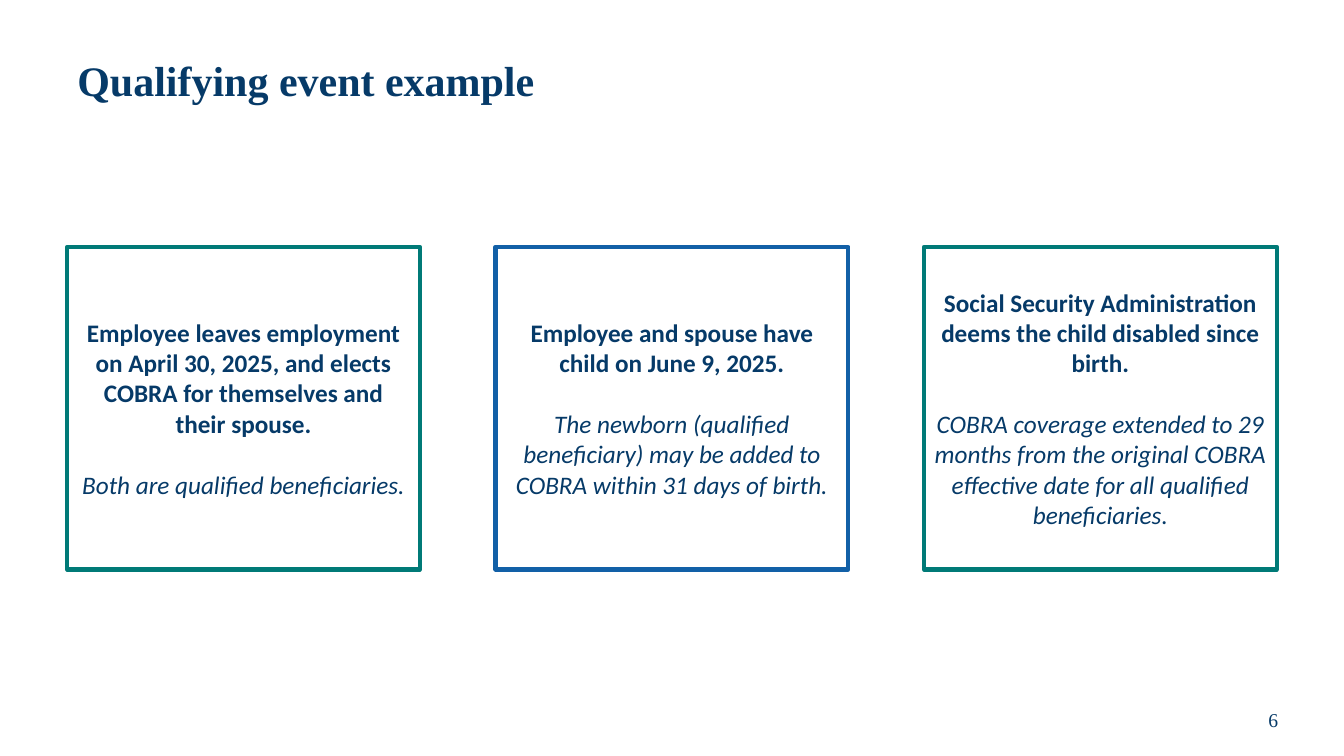
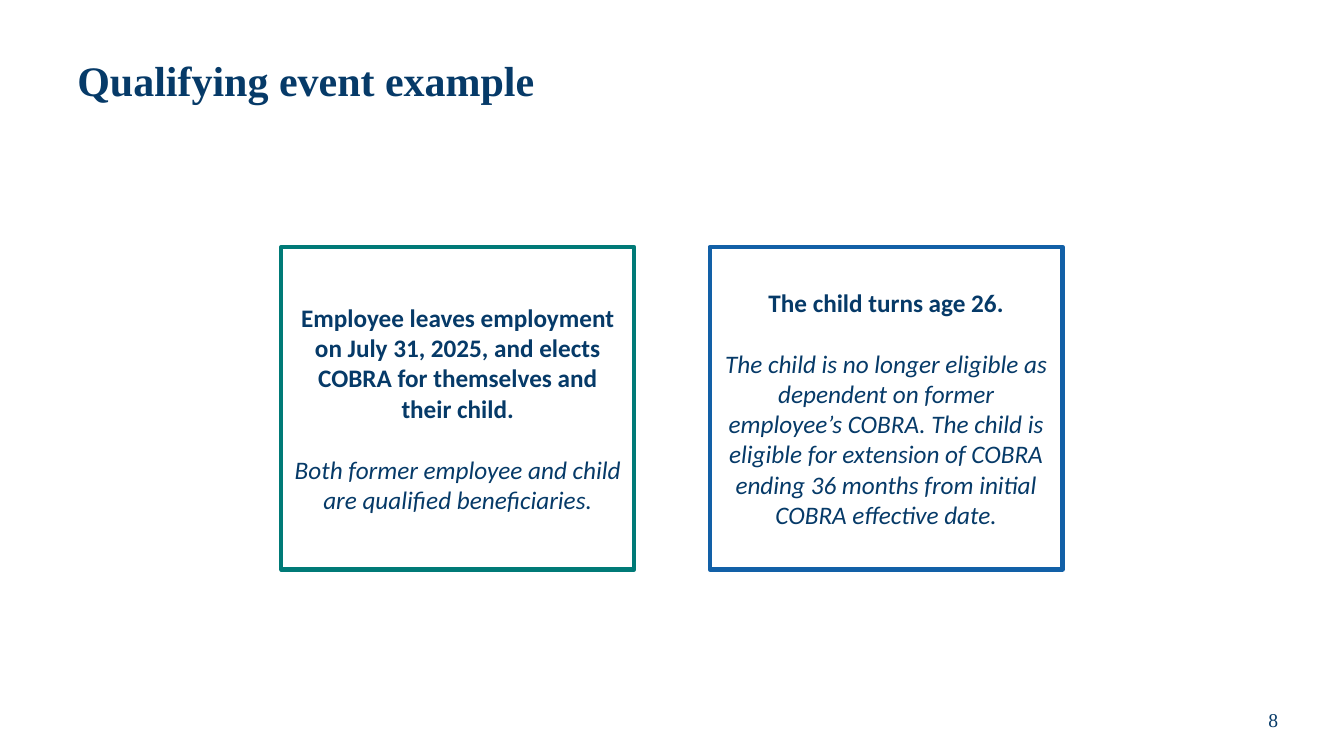
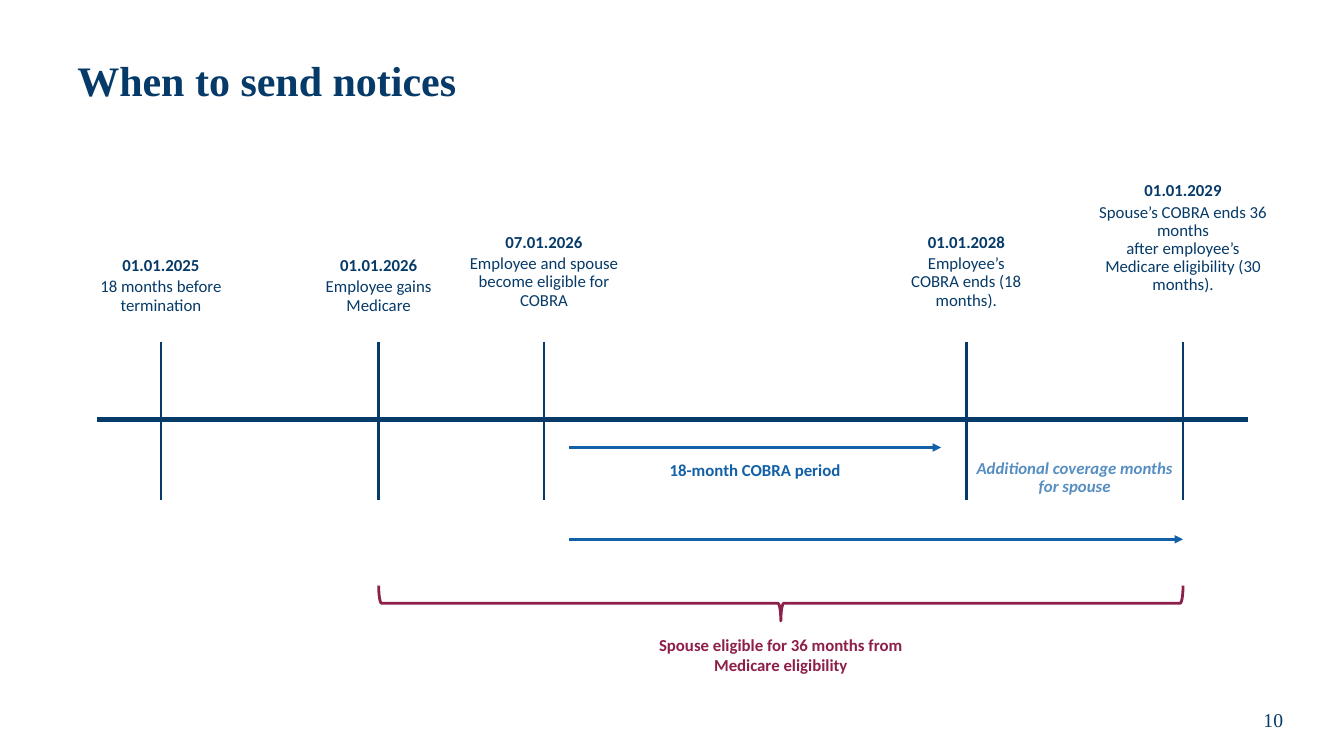
import dataclasses

import pptx
import pptx.dml.color
import pptx.enum.shapes
import pptx.enum.text
import pptx.oxml.ns
import pptx.util
from lxml import etree

SHAPES = pptx.enum.shapes.MSO_SHAPE
ALIGN = pptx.enum.text.PP_ALIGN
ANCHOR = pptx.enum.text.MSO_ANCHOR


@dataclasses.dataclass(frozen=True)
class Style:
    color: str
    size: float
    font: str = "Calibri"
    bold: bool = False
    italic: bool = False
    align: ALIGN = ALIGN.CENTER
    spacing: float = 1.0
    before: float = 0


@dataclasses.dataclass(frozen=True)
class Theme:
    navy: str = "063A68"
    blue: str = "1260A7"
    teal: str = "007A77"
    sky: str = "568EC1"
    wine: str = "8D1F4A"
    serif: str = "Times New Roman"
    title_size: int = 30
    number_size: int = 14
    card_size: int = 18
    label_size: int = 12


THEME = Theme()
TITLE = Style(THEME.navy, THEME.title_size, THEME.serif, bold=True, align=ALIGN.LEFT, spacing=0.9)
NUMBER = Style(THEME.navy, THEME.number_size, THEME.serif)
EVENT = Style(THEME.navy, THEME.card_size, bold=True)
OUTCOME = Style(THEME.navy, THEME.card_size, italic=True, before=22)
DATE = Style(THEME.navy, THEME.label_size, bold=True, spacing=0.9)
MILESTONE = Style(THEME.navy, THEME.label_size, spacing=0.9, before=2.4)
PERIOD = Style(THEME.blue, THEME.label_size, bold=True)
EXTRA = Style(THEME.sky, THEME.label_size, bold=True, italic=True, spacing=0.9)
ELIGIBILITY = Style(THEME.wine, THEME.label_size, bold=True)

presentation = pptx.Presentation()
presentation.slide_width = pptx.util.Inches(13.33)
presentation.slide_height = pptx.util.Inches(7.5)

# Twelve columns between the side margins, fifteen rows over the full height.
COLUMNS = 12
MARGIN = presentation.slide_width * 0.05
COLUMN = presentation.slide_width * 0.9 / COLUMNS
ROW = presentation.slide_height / 15


def area(column, row, columns, rows):
    """Return left, top, width and height of a block of the grid."""
    return (round(MARGIN + column * COLUMN), round(row * ROW),
            round(columns * COLUMN), round(rows * ROW))


def write(shape, *entries, anchor=ANCHOR.TOP):
    """Fill the shape with one paragraph for each (text, style) pair."""
    frame = shape.text_frame
    frame.word_wrap = True
    frame.vertical_anchor = anchor
    for index, (text, style) in enumerate(entries):
        paragraph = frame.add_paragraph() if index else frame.paragraphs[0]
        paragraph.text = text
        paragraph.alignment = style.align
        paragraph.line_spacing = style.spacing
        paragraph.space_before = pptx.util.Pt(style.before)
        paragraph.font.name = style.font
        paragraph.font.size = pptx.util.Pt(style.size)
        paragraph.font.bold = style.bold
        paragraph.font.italic = style.italic
        paragraph.font.color.rgb = pptx.dml.color.RGBColor.from_string(style.color)


# Title, page number and cards (event, outcome) of each slide
pages = [
    ("Qualifying event example", "6", [
        ("Employee leaves employment on April 30, 2025, and elects COBRA for themselves and their spouse.",
         "Both are qualified beneficiaries."),
        ("Employee and spouse have child on June 9, 2025.",
         "The newborn (qualified beneficiary) may be added to COBRA within 31 days of birth."),
        ("Social Security Administration deems the child disabled since birth.",
         "COBRA coverage extended to 29 months from the original COBRA effective date "
         "for all qualified beneficiaries."),
    ]),
    ("Qualifying event example", "8", [
        ("Employee leaves employment on July 31, 2025, and elects COBRA for themselves and their child.",
         "Both former employee and child are qualified beneficiaries."),
        ("The child turns age 26.",
         "The child is no longer eligible as dependent on former employee’s COBRA. The child is eligible "
         "for extension of COBRA ending 36 months from initial COBRA effective date."),
    ]),
    ("When to send notices", "10", []),
]
CARD_WIDTH, CARD_GAP = 3.5, 0.75

for title, number, cards in pages:
    slide = presentation.slides.add_slide(presentation.slide_layouts[5])
    heading = slide.shapes.title
    heading.left, heading.top, heading.width, heading.height = area(0, 0.5, COLUMNS, 2.3)
    write(heading, (title, TITLE), anchor=ANCHOR.MIDDLE)
    page_number = slide.shapes.add_textbox(*area(11.38, 13.78, 1.17, 1))
    write(page_number, (number, NUMBER), anchor=ANCHOR.MIDDLE)

    first_column = (COLUMNS + CARD_GAP - len(cards) * (CARD_WIDTH + CARD_GAP)) / 2
    for index, (event, outcome) in enumerate(cards):
        column = first_column + index * (CARD_WIDTH + CARD_GAP)
        card = slide.shapes.add_shape(SHAPES.RECTANGLE, *area(column, 4.9, CARD_WIDTH, 6.4))
        card.shadow.inherit = False
        card.fill.background()
        color = THEME.blue if index % 2 else THEME.teal
        card.line.color.rgb = pptx.dml.color.RGBColor.from_string(color)
        card.line.width = pptx.util.Pt(3)
        card.text_frame.margin_top = card.text_frame.margin_bottom = pptx.util.Inches(0.1)
        write(card, (event, EVENT), (outcome, OUTCOME), anchor=ANCHOR.MIDDLE)

# Timeline on the last slide: column, label row, label width, date, text
milestones = [
    (0.93, 5, 1.87, "01.01.2025", "18 months before termination"),
    (3.09, 5, 1.57, "01.01.2026", "Employee gains Medicare"),
    (4.73, 4.54, 1.87, "07.01.2026", "Employee and spouse become eligible for COBRA"),
    (8.92, 4.54, 1.38, "01.01.2028", "Employee’s COBRA ends (18 months)."),
    (11.07, 3.52, 1.96, "01.01.2029",
     "Spouse’s COBRA ends 36 months\vafter employee’s Medicare eligibility (30 months)."),
]
TICK_TOP, TICK_ROWS = 6.78, 3.14
medicare, cobra_start, cobra_end, spouse_end = [milestone[0] for milestone in milestones[1:]]
arrow_start = cobra_start + 0.25
period_length = cobra_end - 0.25 - arrow_start

# Column, row, columns, rows, colour, weight, arrowhead
lines = [(0.3, 8.32, 11.41, 0, THEME.navy, 4, False)]
lines += [(milestone[0], TICK_TOP, 0, TICK_ROWS, THEME.navy, 2, False) for milestone in milestones]
lines += [(arrow_start, 8.88, period_length, 0, THEME.blue, 2, True),
          (arrow_start, 10.7, spouse_end - arrow_start, 0, THEME.blue, 2, True)]
for *block, color, weight, has_arrow in lines:
    left, top, width, height = area(*block)
    line = slide.shapes.add_connector(pptx.enum.shapes.MSO_CONNECTOR.STRAIGHT,
                                      left, top, left + width, top + height)
    line.line.color.rgb = pptx.dml.color.RGBColor.from_string(color)
    line.line.width = pptx.util.Pt(weight)
    if has_arrow:
        etree.SubElement(line.line._get_or_add_ln(), pptx.oxml.ns.qn("a:tailEnd"), type="triangle")
    etree.SubElement(line._element.spPr, pptx.oxml.ns.qn("a:effectLst"))

for column, row, width, date, text in milestones:
    label = slide.shapes.add_textbox(*area(column - width / 2, row, width, 1.5))
    write(label, (date, DATE), (text, MILESTONE))

# The brace is drawn upright and turned to span the Medicare period.
span = spouse_end - medicare
middle = (medicare + spouse_end) / 2
brace_rows = span * COLUMN / ROW
brace = slide.shapes.add_shape(SHAPES.LEFT_BRACE,
                               *area(middle - 0.175, 11.61 + 0.36 - brace_rows / 2, 0.35, brace_rows))
brace.rotation = 270
brace.shadow.inherit = False
brace.fill.background()
brace.line.color.rgb = pptx.dml.color.RGBColor.from_string(THEME.wine)
brace.line.width = pptx.util.Pt(2)

captions = [
    (arrow_start, 9.02, period_length, "18-month COBRA period", PERIOD),
    (cobra_end, 9.02, spouse_end - cobra_end, "Additional coverage months for spouse", EXTRA),
    (middle - 1.45, 12.5, 2.9, "Spouse eligible for 36 months from Medicare eligibility", ELIGIBILITY),
]
for column, row, width, text, style in captions:
    caption = slide.shapes.add_textbox(*area(column, row, width, 1))
    write(caption, (text, style))

presentation.save("out.pptx")
